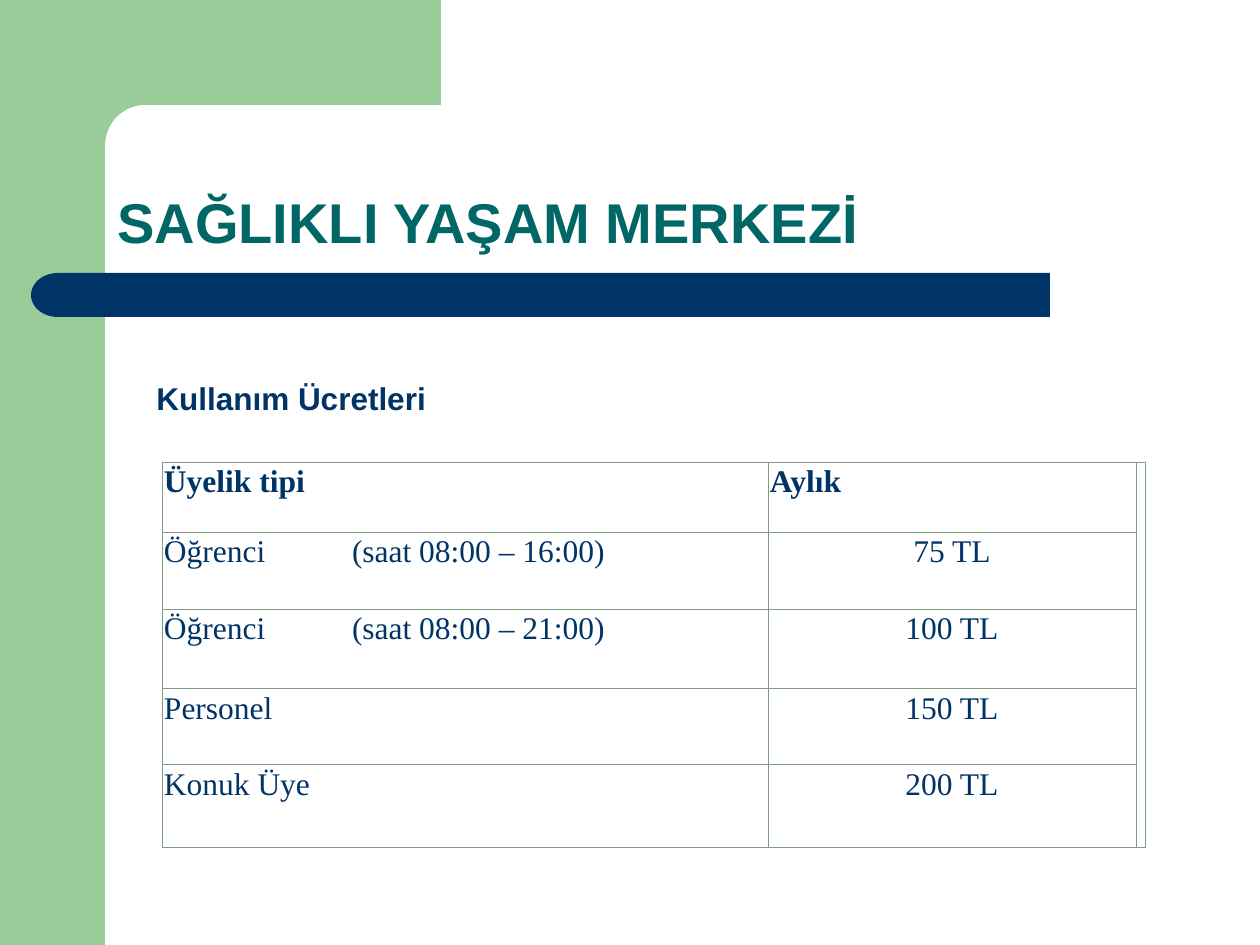
from math import cos, pi, sin

from lxml.etree import SubElement
from pptx import Presentation
from pptx.dml.color import RGBColor
from pptx.enum.shapes import MSO_SHAPE
from pptx.enum.text import MSO_ANCHOR, PP_ALIGN
from pptx.oxml.ns import qn
from pptx.util import Emu, Pt

GREEN = RGBColor(0x99, 0xCC, 0x99)
NAVY = RGBColor(0x00, 0x33, 0x66)
TEAL = RGBColor(0x00, 0x66, 0x66)
BORDER = RGBColor(0x81, 0x9C, 0x84)

COLUMNS = [606, 368, 9]
ROWS = [70, 77, 80, 76, 83]
FEES = [
    ("Üyelik tipi", "Aylık"),
    ("Öğrenci\t(saat 08:00 – 16:00)", "75 TL"),
    ("Öğrenci\t(saat 08:00 – 21:00)", "100 TL"),
    ("Personel", "150 TL"),
    ("Konuk Üye", "200 TL"),
]


def px(length):
    return Emu(round(length * 914400 / 126))


class SlideBuilder:
    heading_font = "Arial"
    table_font = "Times New Roman"
    table_size = 18
    cell_margin = 2
    border_width = Pt(0.6)
    hours_tab = 188

    def __init__(self, page):
        self.page = page

    def paint(self, shape, color):
        shape.shadow.inherit = False
        shape.fill.solid()
        shape.fill.fore_color.rgb = color
        shape.line.fill.background()

    def shape(self, kind, left, top, width, height, color):
        shape = self.page.shapes.add_shape(kind, px(left), px(top), px(width), px(height))
        self.paint(shape, color)
        return shape

    def outline(self, points, color):
        start, *rest = [(px(x), px(y)) for x, y in points]
        builder = self.page.shapes.build_freeform(*start)
        builder.add_line_segments(rest, close=True)
        self.paint(builder.convert_to_shape(), color)

    def style(self, paragraph, font_name, size, color, bold):
        font = paragraph.font
        font.name, font.size, font.bold = font_name, Pt(size), bold
        font.color.rgb = color

    def text(self, words, left, top, width, height, size, color,
             wrap=True, anchor=MSO_ANCHOR.TOP, line_spacing=None):
        box = self.page.shapes.add_textbox(px(left), px(top), px(width), px(height))
        frame = box.text_frame
        frame.word_wrap = wrap
        frame.vertical_anchor = anchor
        paragraph = frame.paragraphs[0]
        paragraph.text = words
        paragraph.line_spacing = line_spacing
        self.style(paragraph, self.heading_font, size, color, True)

    def border(self, cell):
        properties = cell._tc.get_or_add_tcPr()
        for side in ("a:lnL", "a:lnR", "a:lnT", "a:lnB"):
            line = SubElement(properties, qn(side), w=str(self.border_width))
            fill = SubElement(line, qn("a:solidFill"))
            SubElement(fill, qn("a:srgbClr"), val=str(BORDER))

    def cell(self, cell, words, bold, align):
        margin = px(self.cell_margin)
        cell.margin_left = cell.margin_right = margin
        cell.margin_top = cell.margin_bottom = margin
        self.border(cell)
        cell.fill.background()
        paragraph = cell.text_frame.paragraphs[0]
        paragraph.text = words
        paragraph.alignment = align
        if "\t" in words:
            tabs = SubElement(paragraph._p.get_or_add_pPr(), qn("a:tabLst"))
            SubElement(tabs, qn("a:tab"), pos=str(px(self.hours_tab)), algn="l")
        self.style(paragraph, self.table_font, self.table_size, NAVY, bold)

    def table(self, left, top, columns, rows, content):
        table = self.page.shapes.add_table(
            len(rows), len(columns), px(left), px(top), px(sum(columns)), px(sum(rows))
        ).table
        table.first_row = table.horz_banding = False
        for column, width in zip(table.columns, columns):
            column.width = px(width)
        for row, height in zip(table.rows, rows):
            row.height = px(height)
        for r, words in enumerate(content):
            for c, entry in enumerate((*words, "")):
                align = PP_ALIGN.CENTER if r and c == 1 else PP_ALIGN.LEFT
                self.cell(table.cell(r, c), entry, r == 0, align)
        last = len(columns) - 1
        table.cell(0, last).merge(table.cell(len(rows) - 1, last))


def main():
    deck = Presentation()
    deck.slide_width, deck.slide_height = px(1260), px(945)
    slide = SlideBuilder(deck.slides.add_slide(deck.slide_layouts[6]))

    slide.shape(MSO_SHAPE.RECTANGLE, 0, 0, 105, 945, GREEN)
    angles = [pi / 2 * step / 16 for step in range(17)]
    corner = [(145 - 40 * sin(a), 146 - 41 * cos(a)) for a in angles]
    slide.outline(
        [(63, 0), (441, 0), (441, 105), *corner, (105, 161), (63, 161)], GREEN
    )
    slide.shape(MSO_SHAPE.RECTANGLE, 84, 273, 966, 44, NAVY)
    cap = slide.shape(MSO_SHAPE.FLOWCHART_DELAY, 31, 273, 54, 44, NAVY)
    cap._element.spPr.get_or_add_xfrm().set("flipH", "1")

    slide.text("SAĞLIKLI YAŞAM MERKEZİ", 105, 105, 1092, 157, 32, TEAL,
               anchor=MSO_ANCHOR.BOTTOM, line_spacing=0.9)
    slide.table(162, 462, COLUMNS, ROWS, FEES)
    slide.text("Kullanım Ücretleri", 144, 373, 297, 50, 18, NAVY, wrap=False)

    deck.save("out.pptx")


if __name__ == "__main__":
    main()
